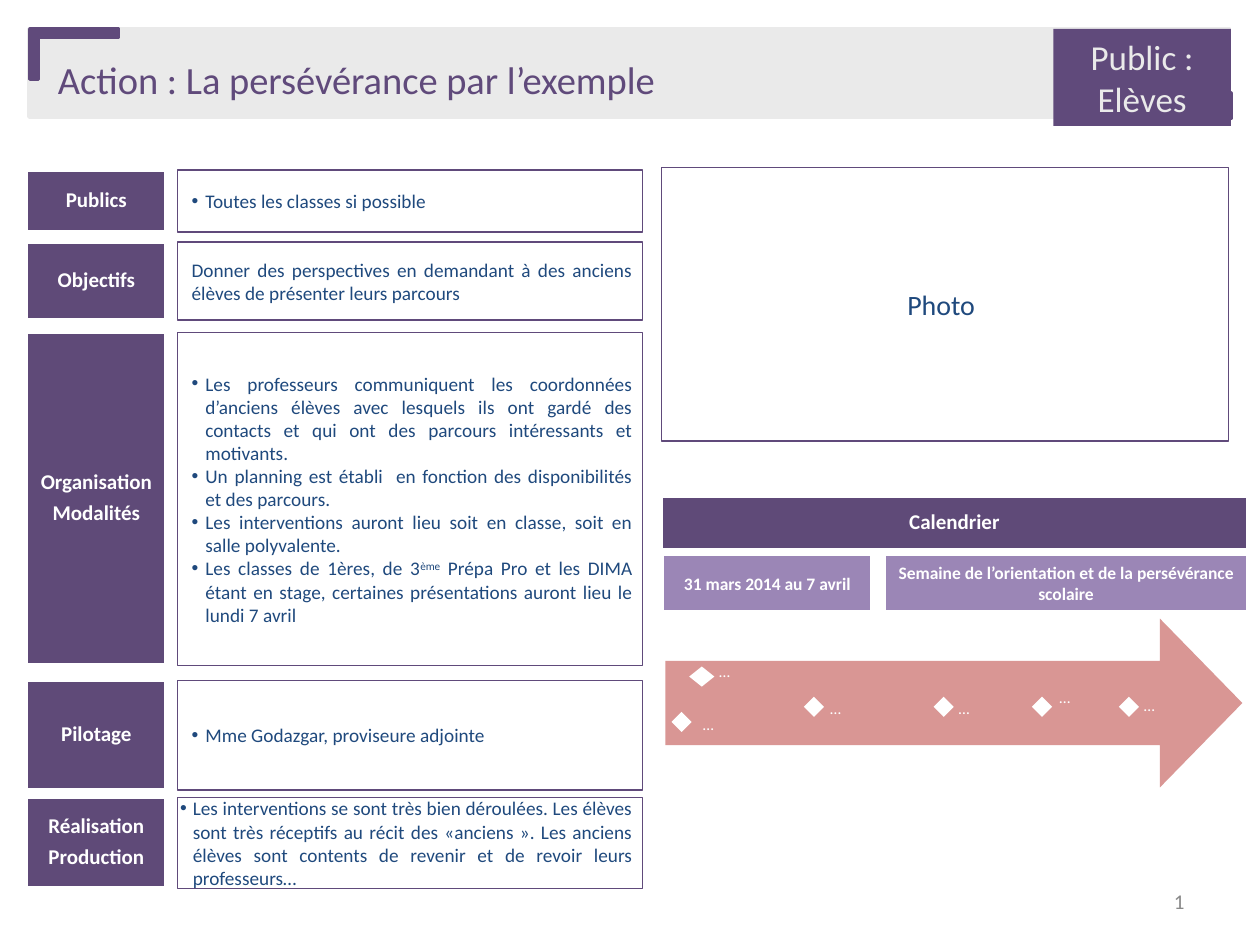
from dataclasses import dataclass

from lxml import etree
from pptx import Presentation
from pptx.dml.color import RGBColor
from pptx.enum.shapes import MSO_SHAPE as Shape
from pptx.enum.text import MSO_ANCHOR as Anchor, MSO_AUTO_SIZE as AutoSize, PP_ALIGN as Align
from pptx.oxml.ns import qn
from pptx.util import Inches, Pt

COLUMNS, ROWS = 100, 75


@dataclass(frozen=True)
class Theme:
    font: str = "Calibri"
    purple: str = "604A7B"
    label: str = "5F4A78"
    lilac: str = "8064A2"
    rose: str = "D99694"
    navy: str = "1F497D"
    pale: str = "EAEAEA"
    grey: str = "898989"
    white: str = "FFFFFF"
    title_size: float = 22
    badge_size: float = 20
    photo_size: float = 16
    label_size: float = 12
    body_size: float = 11
    date_size: float = 10
    mark_size: float = 9
    thick: float = 2
    thin: float = 0.75


class ActionSheet:
    def __init__(self, deck, theme):
        self.theme = theme
        self.slide = deck.slides.add_slide(deck.slide_layouts[5])
        self.column = deck.slide_width / COLUMNS
        self.row = deck.slide_height / ROWS

    def point(self, x, y):
        return int(x * self.column), int(y * self.row)

    def place(self, x, y, width, height):
        return self.point(x, y) + self.point(width, height)

    def style(self, frame, size, color, bold=False, align=Align.LEFT):
        for paragraph in frame.paragraphs:
            paragraph.alignment = align
            for run in paragraph.runs:
                run.font.name = self.theme.font
                run.font.size = Pt(size)
                run.font.bold = bold
                run.font.color.rgb = RGBColor.from_string(color)

    def paint(self, block, fill=None, line=None, weight=0):
        block.shadow.inherit = False
        if fill:
            block.fill.solid()
            block.fill.fore_color.rgb = RGBColor.from_string(fill)
        else:
            block.fill.background()
        if line:
            block.line.color.rgb = RGBColor.from_string(line)
            block.line.width = Pt(weight)
        else:
            block.line.fill.background()

    def block(self, kind, area, fill=None, line=None, weight=0, adjust=(), alpha=None):
        block = self.slide.shapes.add_shape(kind, *self.place(*area))
        for index, value in enumerate(adjust):
            block.adjustments[index] = value
        self.paint(block, fill, line, weight)
        if alpha:
            tone = block._element.spPr.find(qn("a:solidFill"))[0]
            etree.SubElement(tone, qn("a:alpha")).set("val", str(alpha * 1000))
        return block

    def bracket(self, x, y, across, down, thickness):
        steps = [(across, 0), (across, thickness), (thickness, thickness),
                 (thickness, down), (0, down)]
        outline = self.slide.shapes.build_freeform(*self.point(x, y))
        outline.add_line_segments([self.point(x + dx, y + dy) for dx, dy in steps])
        self.paint(outline.convert_to_shape(), self.theme.purple, self.theme.purple,
                   self.theme.thick)

    def title(self, text, area):
        title = self.slide.shapes.title
        self.slide.shapes._spTree.append(title._element)
        title.left, title.top, title.width, title.height = self.place(*area)
        frame = title.text_frame
        frame.text = text
        frame.auto_size = AutoSize.NONE
        frame.vertical_anchor = Anchor.MIDDLE
        self.style(frame, self.theme.title_size, self.theme.purple)

    def badge(self, text, area):
        frame = self.block(Shape.RECTANGLE, area, self.theme.purple).text_frame
        frame.text = text
        frame.vertical_anchor = Anchor.TOP
        self.style(frame, self.theme.badge_size, self.theme.pale, align=Align.CENTER)

    def label(self, text, area):
        theme = self.theme
        frame = self.block(Shape.RECTANGLE, area, theme.label, theme.white, theme.thick).text_frame
        frame.text = text
        for paragraph in frame.paragraphs:
            paragraph.line_spacing = 0.8
            paragraph.space_after = Pt(6)
        self.style(frame, theme.label_size, theme.white, True, Align.CENTER)

    def date(self, text, area):
        theme = self.theme
        frame = self.block(Shape.RECTANGLE, area, theme.lilac, theme.white, theme.thick,
                           alpha=78).text_frame
        frame.text = text
        frame.paragraphs[0].space_after = Pt(6)
        self.style(frame, theme.date_size, theme.white, True, Align.CENTER)

    def panel(self, text, area, size, align=Align.JUSTIFY, indent=(0, 0)):
        margin, hanging = indent
        frame = self.block(Shape.PENTAGON, area, line=self.theme.purple,
                           weight=self.theme.thin, adjust=(0,)).text_frame
        frame.margin_left, frame.margin_right = Inches(0.02), Inches(0.08)
        frame.text = text
        for paragraph in frame.paragraphs:
            properties = paragraph._p.get_or_add_pPr()
            properties.set("marL", str(Inches(margin)))
            properties.set("indent", str(Inches(hanging)))
            if hanging:
                etree.SubElement(properties, qn("a:buFont")).set("typeface", "Arial")
                etree.SubElement(properties, qn("a:buChar")).set("char", "•")
            self.raise_ordinal(paragraph)
        self.style(frame, size, self.theme.navy, align=align)

    def raise_ordinal(self, paragraph, ordinal="ème"):
        before, found, after = paragraph.text.partition("3" + ordinal)
        if found:
            paragraph.text = before + "3"
            for part in (ordinal, after):
                paragraph.add_run().text = part
            paragraph.runs[1].font._element.set("baseline", "30000")

    def note(self, text, area, size, color, align=Align.LEFT, anchor=Anchor.TOP):
        frame = self.slide.shapes.add_textbox(*self.place(*area)).text_frame
        frame.word_wrap = True
        frame.vertical_anchor = anchor
        frame.text = text
        self.style(frame, size, color, align=align)

    def milestone(self, x, y, width, note_x, note_y):
        self.block(Shape.DIAMOND, (x, y, width, 1.6), self.theme.white)
        self.note("…", (note_x, note_y, 8, 2.5), self.theme.mark_size, self.theme.white)


SECTIONS = [
    ("Publics", 13.5, 4.9, (0.2, -0.11), "Toutes les classes si possible"),
    ("Objectifs", 19.2, 6.2, (0.09, 0),
     "Donner des perspectives en demandant à des anciens élèves de présenter leurs parcours"),
    ("Organisation\nModalités", 26.4, 26.4, (0.2, -0.11),
     "Les professeurs communiquent les coordonnées d’anciens élèves avec lesquels ils ont gardé "
     "des contacts et qui ont des parcours intéressants et motivants.\n"
     "Un planning est établi  en fonction des disponibilités et des parcours.\n"
     "Les interventions auront lieu soit en classe, soit en salle polyvalente.\n"
     "Les classes de 1ères, de 3ème Prépa Pro et les DIMA étant en stage, certaines "
     "présentations auront lieu le lundi 7 avril"),
    ("Pilotage", 54, 8.7, (0.2, -0.11), "Mme Godazgar, proviseure adjointe"),
    ("Réalisation\nProduction", 63.3, 7.2, (0.1, -0.1),
     "Les interventions se sont très bien déroulées. Les élèves sont très réceptifs au récit des "
     "«anciens ». Les anciens élèves sont contents de revenir et de revoir leurs professeurs…"),
]
MILESTONES = [
    (53.3, 56.5, 1.6, 54.8, 56.2),
    (74.1, 55.3, 1.6, 75.1, 55),
    (63.8, 55.3, 1.6, 64.9, 55),
    (81.9, 55.3, 1.6, 83.1, 54.1),
    (88.8, 55.3, 1.6, 89.8, 54.7),
    (54.7, 52.9, 2, 56.1, 52),
]


def main():
    deck = Presentation()
    deck.slide_width, deck.slide_height = Inches(10), Inches(7.5)
    theme = Theme()
    sheet = ActionSheet(deck, theme)

    sheet.block(Shape.RECTANGLE, (2.3, 2.3, 95.3, 7), theme.pale, theme.pale, theme.thick)
    sheet.bracket(2.4, 2.3, 7, 4, 0.66)
    sheet.bracket(97.7, 9.4, -1.6, -2, -0.27)
    sheet.title("Action : La persévérance par l’exemple", (3.6, 3.7, 94.1, 5.1))
    sheet.badge("Public : Elèves", (83.6, 2.3, 14.1, 7.7))

    for heading, top, height, indent, content in SECTIONS:
        sheet.label(heading, (2.1, top, 11.1, height))
        sheet.panel(content, (14.1, top, 36.9, height), theme.body_size, indent=indent)

    sheet.panel("Photo", (52.5, 13.3, 45, 21.7), theme.photo_size, Align.CENTER)
    sheet.label("Calendrier", (52.5, 39.4, 46.5, 4.2))
    sheet.date("31 mars 2014 au 7 avril", (52.6, 44, 16.6, 4.6))
    sheet.date("Semaine de l’orientation et de la persévérance scolaire", (70.2, 44, 28.8, 4.6))
    sheet.block(Shape.RIGHT_ARROW, (52.8, 49.1, 45.8, 13.4), theme.rose, adjust=(0.5, 0.488))
    for milestone in MILESTONES:
        sheet.milestone(*milestone)
    sheet.note("1", (71.7, 69.5, 23.3, 4), theme.label_size, theme.grey,
               Align.RIGHT, Anchor.MIDDLE)

    deck.save("out.pptx")


if __name__ == "__main__":
    main()
